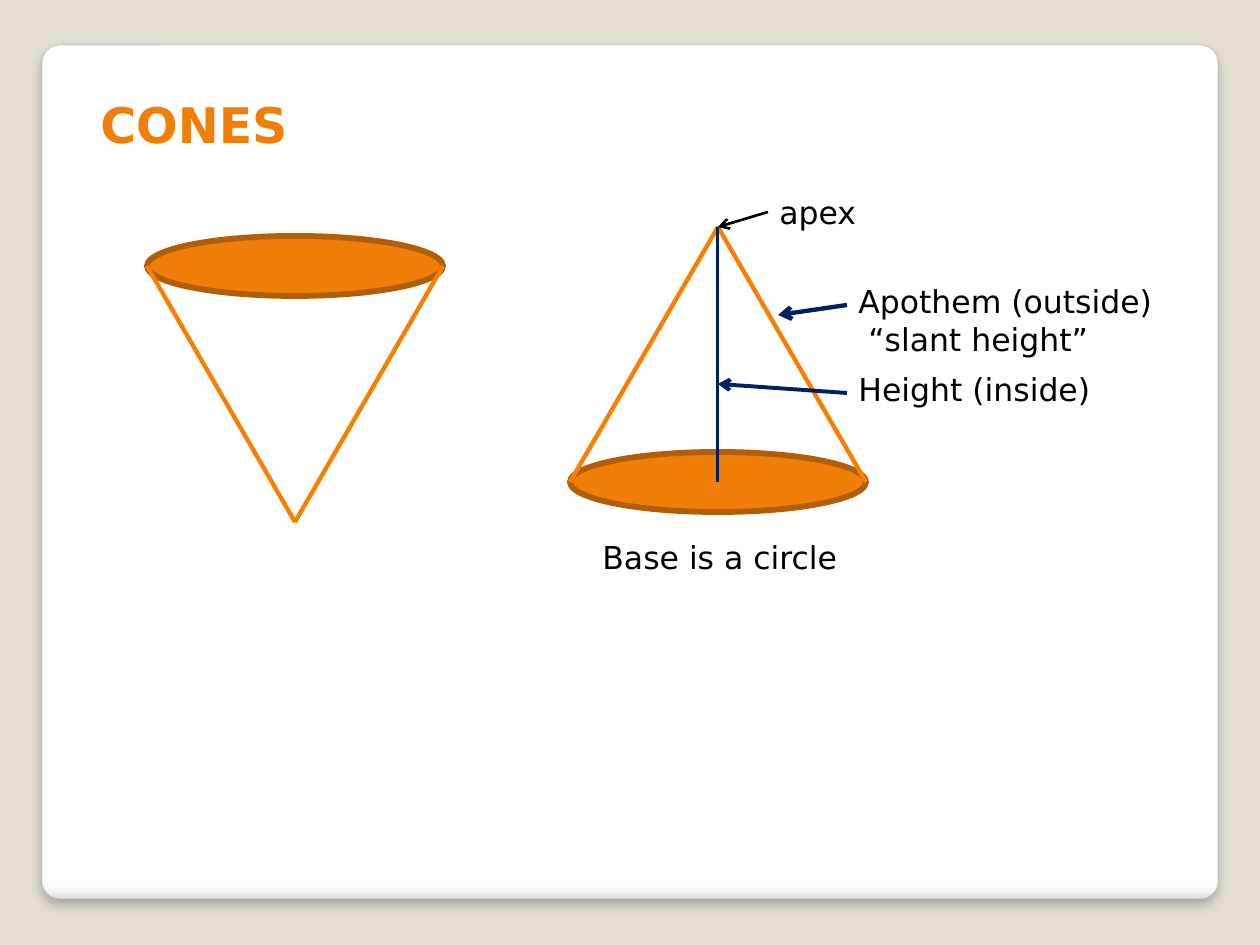
from lxml.etree import SubElement
from pptx import Presentation
from pptx.dml.color import RGBColor
from pptx.enum.shapes import MSO_CONNECTOR as CONN, MSO_SHAPE as SHAPE
from pptx.oxml.ns import qn
from pptx.util import Emu, Pt

EMU_PER_PX = 914400 / 126
FONT = "DejaVu Sans"
ORANGE, RIM, EDGE = "F07F09", "B25E07", "F97F00"
NAVY, BLACK = "002060", "000000"


def px(n):
    return Emu(round(n * EMU_PER_PX))


def rgb(hex_color):
    return RGBColor.from_string(hex_color)


class Deck:
    def __init__(self, width, height, background):
        self.prs = Presentation()
        self.prs.slide_width, self.prs.slide_height = px(width), px(height)
        self.s = self.prs.slides.add_slide(self.prs.slide_layouts[6])
        fill = self.s.background.fill
        fill.solid()
        fill.fore_color.rgb = rgb(background)

    def shape(self, kind, x, y, w, h, line, weight):
        sp = self.s.shapes.add_shape(kind, px(x), px(y), px(w), px(h))
        sp.shadow.inherit = False
        sp.line.color.rgb = rgb(line)
        sp.line.width = Pt(weight)
        return sp

    def panel(self, x, y, w, h):
        sp = self.shape(SHAPE.ROUNDED_RECTANGLE, x, y, w, h, "A4A4A4", 0.16)
        sp.adjustments[0] = 0.021
        sp.fill.gradient()
        sp.fill.gradient_angle = 270
        pr = sp._element.spPr
        stops = pr.find(".//" + qn("a:gsLst"))
        for old in list(stops):
            stops.remove(old)
        for pos, color in ((0, "FFFFFF"), (98, "FFFFFF"), (99, "F7F7F7"), (100, "DADADA")):
            stop = SubElement(stops, qn("a:gs"), pos=str(pos * 1000))
            SubElement(stop, qn("a:srgbClr"), val=color)
        shadow = SubElement(pr.find(qn("a:effectLst")), qn("a:outerShdw"),
                            blurRad=str(Pt(6)), dist=str(Pt(4)), dir="5400000",
                            algn="t", rotWithShape="0")
        tint = SubElement(shadow, qn("a:srgbClr"), val=BLACK)
        SubElement(tint, qn("a:alpha"), val="25000")

    def ellipse(self, cx, cy, rx, ry):
        sp = self.shape(SHAPE.OVAL, cx - rx, cy - ry, 2 * rx, 2 * ry, RIM, 3.35)
        sp.fill.solid()
        sp.fill.fore_color.rgb = rgb(ORANGE)

    def line(self, start, end, color, weight, arrow=False):
        c = self.s.shapes.add_connector(CONN.STRAIGHT, *map(px, start + end))
        c.line.color.rgb = rgb(color)
        c.line.width = Pt(weight)
        if arrow:
            SubElement(c.line._get_or_add_ln(), qn("a:tailEnd"), type="arrow")
        SubElement(c._element.spPr, qn("a:effectLst"))

    def text(self, x, y, w, h, *lines, size=18, color=BLACK, bold=False):
        tf = self.s.shapes.add_textbox(px(x), px(y), px(w), px(h)).text_frame
        tf.word_wrap = True
        for i, words in enumerate(lines):
            p = tf.add_paragraph() if i else tf.paragraphs[0]
            r = p.add_run()
            r.text = words
            r.font.name = FONT
            r.font.size = Pt(size)
            r.font.bold = bold
            r.font.color.rgb = rgb(color)

    def cone(self, base, apex, rx=148, ry=30):
        cx, cy = base
        self.ellipse(cx, cy, rx, ry)
        for side in (-rx, rx):
            self.line((cx + side, cy), apex, EDGE, 2.5)


def main():
    deck = Deck(1260, 945, "E3DED1")
    deck.panel(42, 45, 1176, 854)
    deck.text(88, 88, 640, 72, "CONES", size=28, color=ORANGE, bold=True)

    deck.cone(base=(295, 266), apex=(295, 522))

    base, apex = (718, 482), (718, 227)
    deck.cone(base, apex)
    deck.line(apex, base, NAVY, 1.75)

    deck.line((768, 212), apex, BLACK, 1.5, arrow=True)
    deck.line((847, 393), (718, 384), NAVY, 2.25, arrow=True)
    deck.line((847, 305), (778, 315), NAVY, 2.5, arrow=True)

    deck.text(767, 187, 108, 50, "apex")
    deck.text(846, 276, 364, 90, "Apothem (outside)", " “slant height”")
    deck.text(846, 364, 394, 50, "Height (inside)")
    deck.text(590, 532, 286, 50, "Base is a circle")

    deck.prs.save("out.pptx")


if __name__ == "__main__":
    main()
